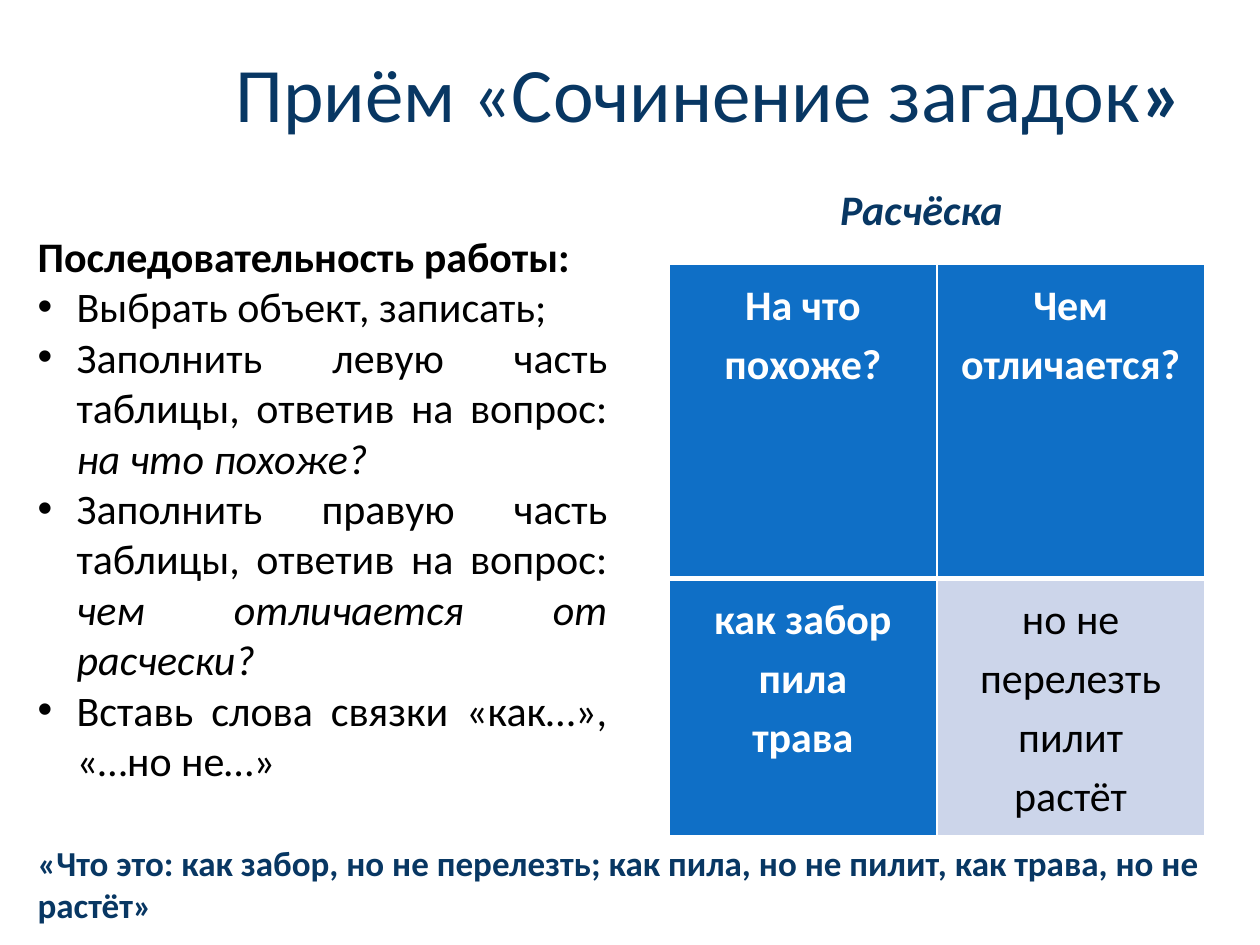
from dataclasses import dataclass

from lxml.etree import SubElement
from pptx import Presentation
from pptx.dml.color import RGBColor
from pptx.enum.text import MSO_AUTO_SIZE, PP_ALIGN
from pptx.oxml import parse_xml
from pptx.oxml.ns import nsdecls, qn
from pptx.util import Inches, Pt


@dataclass(frozen=True)
class Theme:
    font: str = "Calibri"
    navy: str = "083763"
    blue: str = "0F6FC6"
    pale: str = "CCD5EA"
    white: str = "FFFFFF"
    black: str = "000000"
    title_size: int = 44
    body_size: int = 24
    riddle_size: int = 20


THEME = Theme()
COLUMNS, ROWS = 100, 75
SLIDE_WIDTH, SLIDE_HEIGHT = Inches(10), Inches(7.5)


@dataclass(frozen=True)
class Box:
    """An area in grid columns and rows."""
    left: float
    top: float
    width: float
    height: float

    def lengths(self):
        column, row = SLIDE_WIDTH / COLUMNS, SLIDE_HEIGHT / ROWS
        return (round(self.left * column), round(self.top * row),
                round(self.width * column), round(self.height * row))


def add_bullet(paragraph, indent=0.31):
    properties = paragraph._p.get_or_add_pPr()
    properties.set("marL", str(Inches(indent)))
    properties.set("indent", str(-Inches(indent)))
    SubElement(properties, qn("a:buFont")).set("typeface", "Arial")
    SubElement(properties, qn("a:buChar")).set("char", "•")


def write_paragraph(paragraph, *pieces, size=THEME.body_size, color=THEME.black, bold=False,
                    italic=False, align=PP_ALIGN.LEFT, bullet=False, spacing=None, after=None):
    """Write pieces, each a string or a (string, font settings) pair; newlines become breaks."""
    if bullet:
        add_bullet(paragraph)
    paragraph.alignment = align
    if spacing:
        paragraph.line_spacing = spacing
    if after:
        paragraph.space_after = Pt(after)
    for piece in pieces:
        text, changes = (piece, {}) if isinstance(piece, str) else piece
        for number, line in enumerate(text.split("\n")):
            if number:
                paragraph.add_line_break()
            run = paragraph.add_run()
            run.text = line
            font = run.font
            font.name, font.size = THEME.font, Pt(size)
            font.color.rgb = RGBColor.from_string(color)
            font.bold = changes.get("bold", bold)
            font.italic = changes.get("italic", italic)


def add_text_frame(slide, box, wrap=True):
    frame = slide.shapes.add_textbox(*box.lengths()).text_frame
    frame.word_wrap = wrap
    frame.auto_size = MSO_AUTO_SIZE.SHAPE_TO_FIT_TEXT
    return frame


def add_title(slide, box):
    frame = add_text_frame(slide, box, wrap=False)
    write_paragraph(frame.paragraphs[0], "Приём «Сочинение загадок", ("»", {"bold": True}),
                    size=THEME.title_size, color=THEME.navy)


def add_steps(slide, box):
    frame = add_text_frame(slide, box)
    write_paragraph(frame.paragraphs[0], "Последовательность работы:", bold=True)
    italic = {"italic": True}
    steps = [
        ["Выбрать объект, записать;"],
        ["Заполнить левую часть таблицы, ответив на вопрос: ", ("на что похоже?", italic)],
        ["Заполнить правую часть таблицы, ответив на вопрос: ",
         ("чем отличается от расчески?", italic)],
        ["Вставь слова связки «как…», «…но не…»"],
    ]
    for step in steps:
        write_paragraph(frame.add_paragraph(), *step, align=PP_ALIGN.JUSTIFY, bullet=True)


def add_note(slide, box, text, **text_format):
    frame = add_text_frame(slide, box)
    write_paragraph(frame.paragraphs[0], text, color=THEME.navy, bold=True, **text_format)


def set_borders(cell, bottom):
    """Draw white cell borders, 1 pt except for the given bottom width."""
    properties = cell._tc.get_or_add_tcPr()
    for position, (side, width) in enumerate(zip("LRTB", (1, 1, 1, bottom))):
        properties.insert(position, parse_xml(
            f'<a:ln{side} {nsdecls("a")} w="{Pt(width)}"><a:solidFill>'
            f'<a:srgbClr val="{THEME.white}"/></a:solidFill></a:ln{side}>'))


def add_comparison(slide, box, row_heights):
    content = [["На что похоже?", "Чем отличается?"],
               ["как забор\nпила\nтрава", "но не перелезть\nпилит\nрастёт"]]
    table = slide.shapes.add_table(2, 2, *box.lengths()).table
    for row, height in zip(table.rows, row_heights):
        row.height = round(height * SLIDE_HEIGHT / ROWS)
    for row, texts in enumerate(content):
        for column, text in enumerate(texts):
            cell = table.cell(row, column)
            is_answer = row == column == 1
            cell.margin_left = cell.margin_right = Inches(0.07)
            cell.margin_top = cell.margin_bottom = Inches(0.07)
            cell.fill.solid()
            cell.fill.fore_color.rgb = RGBColor.from_string(
                THEME.pale if is_answer else THEME.blue)
            set_borders(cell, bottom=1 if row else 3)
            write_paragraph(cell.text_frame.paragraphs[0], text, bold=not is_answer,
                            color=THEME.black if is_answer else THEME.white,
                            align=PP_ALIGN.CENTER, spacing=1.15,
                            after=6.8 if row or column else None)


def main():
    presentation = Presentation()
    presentation.slide_width, presentation.slide_height = SLIDE_WIDTH, SLIDE_HEIGHT
    slide = presentation.slides.add_slide(presentation.slide_layouts[6])
    add_title(slide, Box(17.7, 3.1, 77.9, 8.4))
    add_steps(slide, Box(2, 17.8, 47.2, 48.5))
    add_note(slide, Box(65.7, 14.1, 18.1, 8.1), "Расчёска", italic=True)
    add_comparison(slide, Box(53.1, 21, 42.5, 45.3), row_heights=(24.9, 20.4))
    add_note(slide, Box(2, 66.3, 98, 11.1),
             "«Что это: как забор, но не перелезть; как пила, но не пилит, "
             "как трава, но не растёт»", size=THEME.riddle_size)
    presentation.save("out.pptx")


if __name__ == "__main__":
    main()
